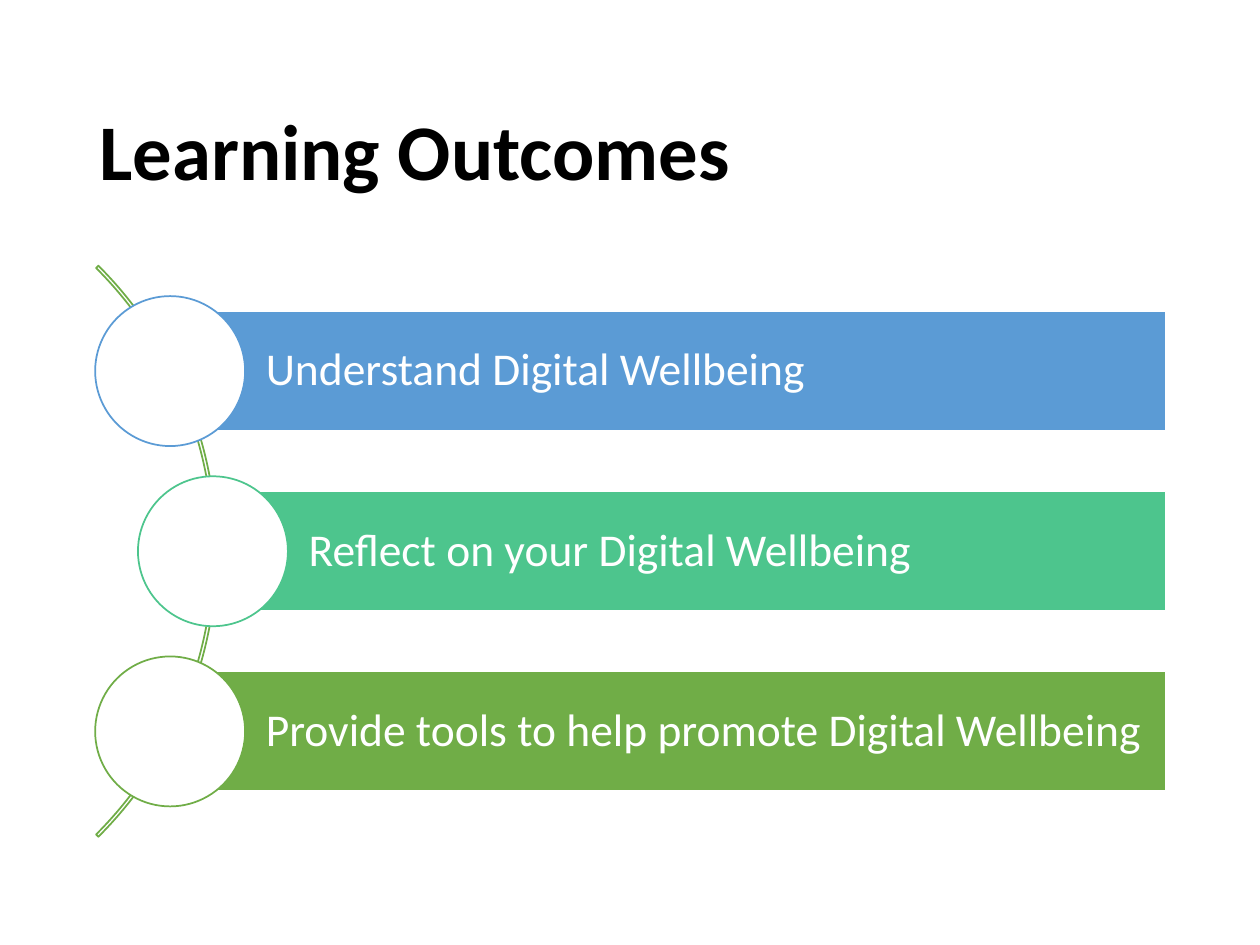
import pptx
import pptx.util
import pptx.dml.color
import pptx.enum.shapes
import pptx.enum.text

Inches = pptx.util.Inches
SHAPE = pptx.enum.shapes.MSO_SHAPE

deck = pptx.Presentation()
deck.slide_width, deck.slide_height = Inches(10), Inches(7.5)
page = deck.slides.add_slide(deck.slide_layouts[6])


def add_shape(kind, left, top, width, height, fill=None, line=None):
    shape = page.shapes.add_shape(
        kind, Inches(left), Inches(top), Inches(width), Inches(height))
    shape.shadow.inherit = False
    for part, color in ((shape.fill, fill), (shape.line.fill, line)):
        if color:
            part.solid()
            part.fore_color.rgb = pptx.dml.color.RGBColor.from_string(color)
        else:
            part.background()
    if line:
        shape.line.width = pptx.util.Pt(1)
    return shape


def write(box, text, size, color, bold=False, left=0.1, margin=0.05, right=0.1):
    frame = box.text_frame
    frame.word_wrap = True
    frame.vertical_anchor = pptx.enum.text.MSO_ANCHOR.MIDDLE
    frame.margin_left, frame.margin_right = Inches(left), Inches(right)
    frame.margin_top = frame.margin_bottom = Inches(margin)
    para = frame.paragraphs[0]
    para.alignment = pptx.enum.text.PP_ALIGN.LEFT
    para.line_spacing = 0.9
    span = para.add_run()
    span.text = text
    span.font.name = "Calibri"
    span.font.size = pptx.util.Pt(size)
    span.font.bold = bold
    span.font.color.rgb = pptx.dml.color.RGBColor.from_string(color)


# Backdrop and title
add_shape(SHAPE.RECTANGLE, 0, 0, 10, 7.5, fill="FFFFFF")
title = page.shapes.add_textbox(
    Inches(0.69), Inches(0.61), Inches(8.62), Inches(1.24))
write(title, "Learning Outcomes", 45, "000000", bold=True)

# Thin arc behind the outcomes, from 315 to 45 degrees
arc = add_shape(SHAPE.BLOCK_ARC, -4.69, 1.17, 6.41, 6.41, line="70AD47")
for index, value in enumerate((189, 27, 0.004)):
    arc.adjustments[index] = value

# Outcome bars, each with a circle centred on its left edge
outcomes = [
    ("Understand Digital Wellbeing", 1.35, "5B9BD5"),
    ("Reflect on your Digital Wellbeing", 1.69, "4DC58D"),
    ("Provide tools to help promote Digital Wellbeing", 1.35, "70AD47"),
]
bar_right, bar_height, circle_size = 9.25, 0.95, 1.19
first_top, row_step = 2.47, 1.43
for row, (text, left, color) in enumerate(outcomes):
    top = first_top + row * row_step
    bar = add_shape(SHAPE.RECTANGLE, left, top, bar_right - left, bar_height,
                    fill=color, line="FFFFFF")
    write(bar, text, 26, "FFFFFF", left=0.76, margin=0.07, right=0.07)
    add_shape(SHAPE.OVAL, left - circle_size / 2,
              top + (bar_height - circle_size) / 2,
              circle_size, circle_size, fill="FFFFFF", line=color)

deck.save("out.pptx")
